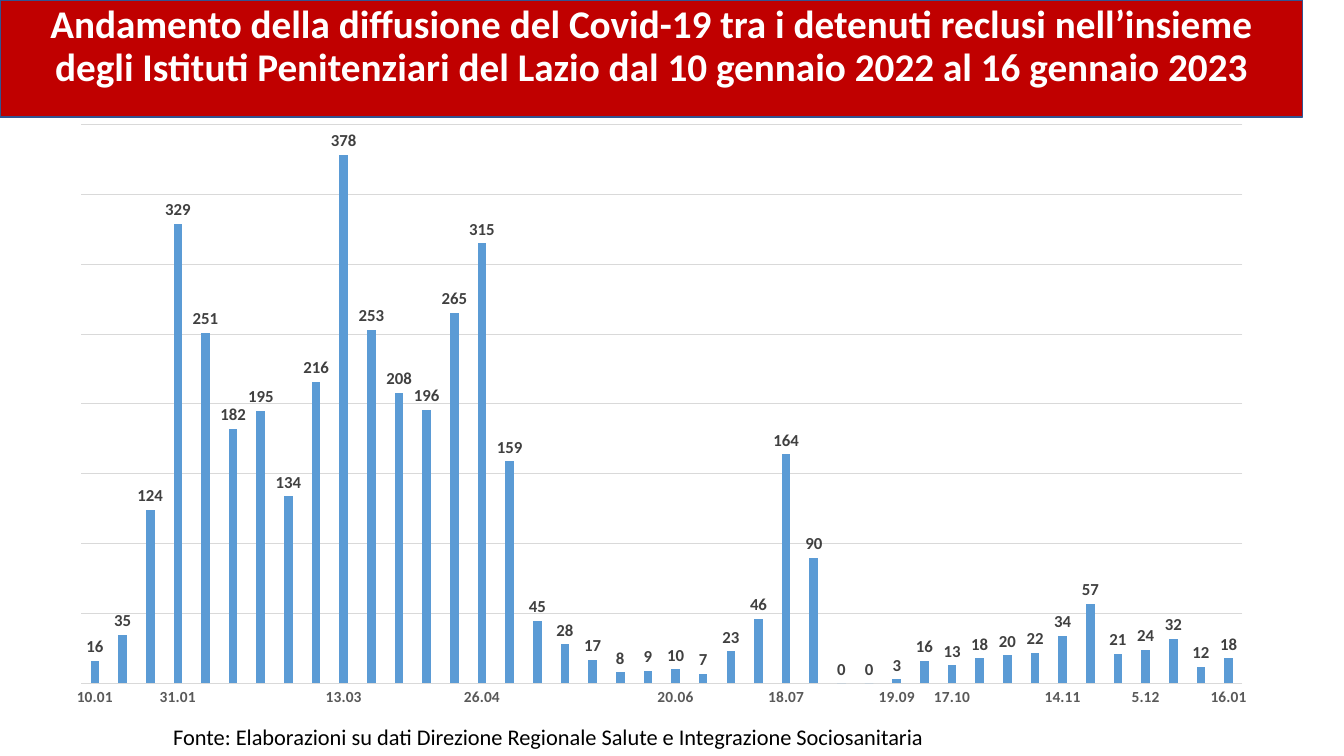
"""Build the slide on Covid-19 among detainees in Lazio prisons."""
from lxml import etree
from pptx import Presentation
from pptx import util as u
from pptx.chart import data as cd
from pptx.dml.color import RGBColor
from pptx.enum import chart as ch, shapes, text
from pptx.oxml import parse_xml

RED = RGBColor(0xC0, 0x00, 0x00)
NAVY = RGBColor(0x32, 0x54, 0x91)
BLUE = RGBColor(0x5B, 0x9B, 0xD5)
WHITE = RGBColor(0xFF, 0xFF, 0xFF)
BLACK = RGBColor(0x00, 0x00, 0x00)
DARK = RGBColor(0x40, 0x40, 0x40)
GREY = RGBColor(0x59, 0x59, 0x59)
LIGHT = RGBColor(0xD9, 0xD9, 0xD9)
C_NS = "http://schemas.openxmlformats.org/drawingml/2006/chart"

CASES = [16, 35, 124, 329, 251, 182, 195, 134, 216, 378, 253, 208, 196, 265,
         315, 159, 45, 28, 17, 8, 9, 10, 7, 23, 46, 164, 90, 0, 0, 3, 16, 13,
         18, 20, 22, 34, 57, 21, 24, 32, 12, 18]
DATES = {0: "10.01", 3: "31.01", 9: "13.03", 14: "26.04", 21: "20.06",
         25: "18.07", 29: "19.09", 31: "17.10", 35: "14.11", 38: "5.12",
         41: "16.01"}


def set_font(font, size, color, bold=False):
    for name, value in {"name": "Calibri", "size": u.Pt(size), "bold": bold}.items():
        setattr(font, name, value)
    font.color.rgb = color


def set_line(line, color, width):
    line.color.rgb = color
    line.width = u.Pt(width)


prs = Presentation()
prs.slide_width, prs.slide_height = u.Pt(960), u.Pt(540)
s = prs.slides.add_slide(prs.slide_layouts[6])

sp = s.shapes.add_shape(shapes.MSO_SHAPE.RECTANGLE, 0, 0, u.Pt(930.24), u.Pt(83.5))
sp.shadow.inherit = False
sp.fill.solid()
sp.fill.fore_color.rgb = RED
set_line(sp.line, NAVY, 1)
tf = sp.text_frame
tf.word_wrap = True
tf.vertical_anchor = text.MSO_ANCHOR.TOP
p = tf.paragraphs[0]
p.alignment = text.PP_ALIGN.CENTER
p.line_spacing = 0.9
r = p.add_run()
r.text = ("Andamento della diffusione del Covid-19 tra i detenuti reclusi nell’insieme "
          "degli Istituti Penitenziari del Lazio dal 10 gennaio 2022 al 16 gennaio 2023")
set_font(r.font, 28, WHITE, True)

sp = s.shapes.add_textbox(u.Pt(116.64), u.Pt(513.36), u.Pt(564.5), u.Pt(26.64))
tf = sp.text_frame
tf.word_wrap = False
tf.auto_size = text.MSO_AUTO_SIZE.SHAPE_TO_FIT_TEXT
r = tf.paragraphs[0].add_run()
r.text = ("Fonte: Elaborazioni su dati Direzione Regionale Salute "
          "e Integrazione Sociosanitaria")
set_font(r.font, 16, BLACK)

data = cd.CategoryChartData()
data.categories = [DATES.get(i, "") for i in range(len(CASES))]
data.add_series("Detenuti positivi", CASES)
chart = s.shapes.add_chart(ch.XL_CHART_TYPE.COLUMN_CLUSTERED, u.Pt(37.44), u.Pt(80.64),
                           u.Pt(870.5), u.Pt(432.72), data).chart
chart.has_legend = chart.has_title = False
set_font(chart.font, 10, BLACK)

plot = chart.plots[0]
for name, value in {"gap_width": 219, "overlap": -27, "vary_by_categories": False,
                    "has_data_labels": True}.items():
    setattr(plot, name, value)
fill = plot.series[0].format.fill
fill.solid()
fill.fore_color.rgb = BLUE
labels = plot.data_labels
labels.show_value = True
labels.position = ch.XL_LABEL_POSITION.OUTSIDE_END
set_font(labels.font, 12, DARK, True)

dates = chart.category_axis
dates.major_tick_mark = ch.XL_TICK_MARK.NONE
set_font(dates.tick_labels.font, 11, GREY, True)
set_line(dates.format.line, LIGHT, 0.75)
skip = etree.Element(f"{{{C_NS}}}tickLblSkip", val="1")
dates._element.find(f"{{{C_NS}}}noMultiLvlLbl").addprevious(skip)

scale = chart.value_axis
for name, value in {"minimum_scale": 0, "maximum_scale": 400, "major_unit": 50,
                    "has_major_gridlines": True, "visible": False}.items():
    setattr(scale, name, value)
set_line(scale.major_gridlines.format.line, LIGHT, 0.75)

area = chart._chartSpace.chart.plotArea
for old in area.findall(f"{{{C_NS}}}layout"):
    area.remove(old)
area.insert(0, parse_xml(
    f'<c:layout xmlns:c="{C_NS}"><c:manualLayout><c:layoutTarget val="inner"/>'
    '<c:xMode val="edge"/><c:yMode val="edge"/><c:x val="0.0235"/><c:y val="0.019"/>'
    '<c:w val="0.953"/><c:h val="0.923"/></c:manualLayout></c:layout>'))

prs.save("out.pptx")
